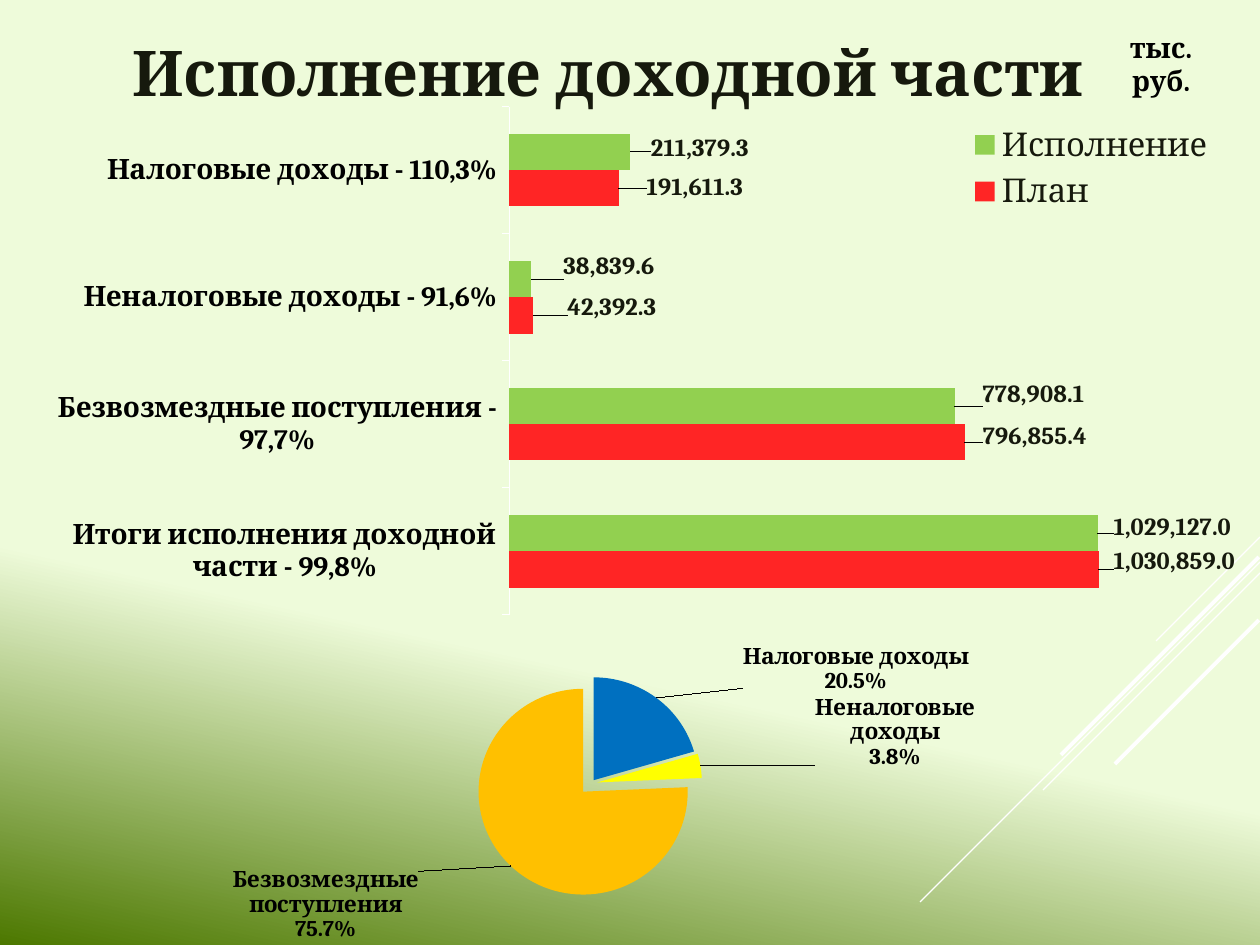
import lxml.etree
import pptx
import pptx.chart.data
import pptx.dml.color
import pptx.enum.chart
import pptx.enum.shapes
import pptx.enum.text
import pptx.oxml.ns
import pptx.util


class Theme:
    """Colours, type sizes and font of the page."""

    font = "Cambria"
    pale, deep = "EEFBDA", "4C7800"
    ink, black, white = "16190D", "000000", "FFFFFF"
    plan, actual = "FF2525", "92D050"
    slices = ("0070C0", "FFFF00", "FFC000")
    title, legend, body, value, share = 36, 18.7, 16, 14, 13


TOTALS = ("Итоги исполнения доходной части - 99,8%", "Безвозмездные поступления - 97,7%",
          "Неналоговые доходы - 91,6%", "Налоговые доходы - 110,3%")
RESULTS = {"План": (1030859, 796855.4, 42392.3, 191611.3),
           "Исполнение": (1029127, 778908.1, 38839.6, 211379.3)}
RESULT_SHIFTS = (((10, -8), (13, -6), (29, -8), (23, -1)),
                 ((11, -6), (23, -12), (27, -12), (16, -3)))
SOURCES = ("Налоговые доходы", "Неналоговые доходы", "Безвозмездные поступления")
SHARES = {"Series 1": (20.5, 3.8, 75.7)}
SHARE_SHIFTS = ((82, -4), (107, 5), (-87, 0))
EXPLOSIONS = (4, 6, 11)
RAYS = ((1260, 537, 104, 0.75), (1260, 562, 340, 0.75), (1260, 573, 217, 0.75),
        (1259, 557, 198, 2.25), (1259, 620, 144, 2.25))


def px(length):
    """Turn pixels into EMU."""
    return pptx.util.Emu(round(length * 914400 / 126))


def frame(box):
    """Turn a pixel box into four EMU lengths."""
    return [px(length) for length in box]


def rgb(code):
    """Turn a hex code into a colour."""
    return pptx.dml.color.RGBColor.from_string(code)


def style(font, size, color, bold=True):
    """Apply the theme font with a size and colour."""
    font.name, font.size, font.bold = Theme.font, pptx.util.Pt(size), bold
    font.color.rgb = rgb(color)


def paint(fill, color):
    """Make a fill solid in one colour."""
    fill.solid()
    fill.fore_color.rgb = rgb(color)


def chart_node(tag, value):
    """Make a chart element with a val attribute."""
    node = lxml.etree.Element(pptx.oxml.ns.qn("c:" + tag))
    node.set("val", str(value))
    return node


def set_layout(part, index, **settings):
    """Give a chart part a manual layout from settings in schema order."""
    for old in part.xpath("./c:layout"):
        part.remove(old)
    layout = lxml.etree.Element(pptx.oxml.ns.qn("c:layout"))
    manual = lxml.etree.SubElement(layout, pptx.oxml.ns.qn("c:manualLayout"))
    manual.extend([chart_node(tag, value) for tag, value in settings.items()])
    part.insert(index, layout)


def label_points(series, box, shifts, size, color, number_format):
    """Style the labels of a series and shift each by pixels."""
    labels = series.data_labels
    labels.show_value, labels.number_format = True, number_format
    for index, (right, down) in enumerate(shifts):
        label = series.points[index].data_label
        style(label.font, size, color)
        label.position = pptx.enum.chart.XL_LABEL_POSITION.OUTSIDE_END
        part = series._element.xpath(f".//c:dLbl[c:idx/@val='{index}']")[0]
        set_layout(part, 1, x=round(right / box[2], 4), y=round(down / box[3], 4))
    style(labels.font, size, color)


def add_chart(page, kind, box, names, rows, area):
    """Add a chart with a fixed inner plot area and return it."""
    data = pptx.chart.data.CategoryChartData()
    data.categories = names
    for name, values in rows.items():
        data.add_series(name, values)
    chart = page.shapes.add_chart(kind, *frame(box), data).chart
    chart.has_title = chart.has_legend = False
    set_layout(chart._element.xpath(".//c:plotArea")[0], 0, layoutTarget="inner",
               xMode="edge", yMode="edge", **dict(zip("xywh", area)))
    return chart


def add_background(page):
    """Fill the page with the green gradient."""
    fill = page.background.fill
    fill.gradient()
    fill.gradient_angle = 258
    for stop, position, color in zip(fill.gradient_stops, (0.67, 1), (Theme.pale, Theme.deep)):
        stop.position, stop.color.rgb = position, rgb(color)


def add_rays(page):
    """Draw the diagonal white rays at the right edge."""
    for x, y, run, width in RAYS:
        ray = page.shapes.add_connector(pptx.enum.shapes.MSO_CONNECTOR.STRAIGHT,
                                        *frame((x, y, x - run, y + run)))
        ray.line.color.rgb, ray.line.width = rgb(Theme.white), pptx.util.Pt(width)
        lxml.etree.SubElement(ray._element.spPr, pptx.oxml.ns.qn("a:effectLst"))


def write_text(shape, box, text, size, color):
    """Place a shape and write one centred bold paragraph."""
    shape.left, shape.top, shape.width, shape.height = frame(box)
    shape.text_frame.text = text
    shape.text_frame.word_wrap = True
    para = shape.text_frame.paragraphs[0]
    para.alignment = pptx.enum.text.PP_ALIGN.CENTER
    style(para.font, size, color)


def add_bars(page, box):
    """Add the bar chart of plan against execution."""
    chart = add_chart(page, pptx.enum.chart.XL_CHART_TYPE.BAR_CLUSTERED, box, TOTALS,
                      RESULTS, (0.402, 0.02, 0.564, 0.95))
    plot = chart.plots[0]
    plot.gap_width, plot.overlap, plot.vary_by_categories = 150, 0, False
    for series, color, shifts in zip(plot.series, (Theme.plan, Theme.actual), RESULT_SHIFTS):
        paint(series.format.fill, color)
        label_points(series, box, shifts, Theme.value, Theme.ink, "#,##0.0")
    style(chart.category_axis.tick_labels.font, Theme.body, Theme.black)
    chart.category_axis.format.line.color.rgb = rgb(Theme.white)
    axis = chart.value_axis
    axis.visible = axis.has_major_gridlines = False
    axis.minimum_scale, axis.maximum_scale = 0, 1200000
    chart.has_legend = True
    legend = chart.legend
    legend.position = pptx.enum.chart.XL_LEGEND_POSITION.RIGHT
    legend.include_in_layout = False
    style(legend.font, Theme.legend, Theme.ink, bold=False)
    set_layout(legend._element, 1, xMode="edge", yMode="edge", x=0.77, y=0.04, w=0.22, h=0.19)


def add_pie(page, box):
    """Add the pie chart of income shares."""
    chart = add_chart(page, pptx.enum.chart.XL_CHART_TYPE.PIE, box, SOURCES,
                      SHARES, (0, 0.034, 0.974, 0.866))
    series = chart.plots[0].series[0]
    node = series._element
    for index, (color, explosion) in enumerate(zip(Theme.slices, EXPLOSIONS)):
        paint(series.points[index].format.fill, color)
        outline = node.xpath("./c:dPt/c:spPr")[index]
        outline.addprevious(chart_node("explosion", explosion))
    node.xpath("./c:dPt")[0].addprevious(chart_node("explosion", 25))
    label_points(series, box, SHARE_SHIFTS, Theme.share, Theme.black, "0.0%")
    for tag, shown in (("showVal", 0), ("showCatName", 1), ("showPercent", 1)):
        for flag in node.xpath(".//c:" + tag):
            flag.set("val", str(shown))
    for flag in node.xpath(".//c:showBubbleSize"):
        separator = lxml.etree.Element(pptx.oxml.ns.qn("c:separator"))
        separator.text = "\n"
        flag.addnext(separator)


def main():
    """Build the deck and save it."""
    deck = pptx.Presentation()
    deck.slide_width, deck.slide_height = frame((1260, 945))
    page = deck.slides.add_slide(deck.slide_layouts[5])
    add_background(page)
    add_rays(page)
    write_text(page.shapes.title, (0, 26, 1216, 90), "Исполнение доходной части",
               Theme.title, Theme.ink)
    add_bars(page, (20, 96, 1217, 535))
    add_pie(page, (35, 643, 1142, 302))
    write_text(page.shapes.add_textbox(0, 0, 0, 0), (1101, 24, 120, 84), "тыс. руб.",
               Theme.body, Theme.black)
    deck.save("out.pptx")


if __name__ == "__main__":
    main()
